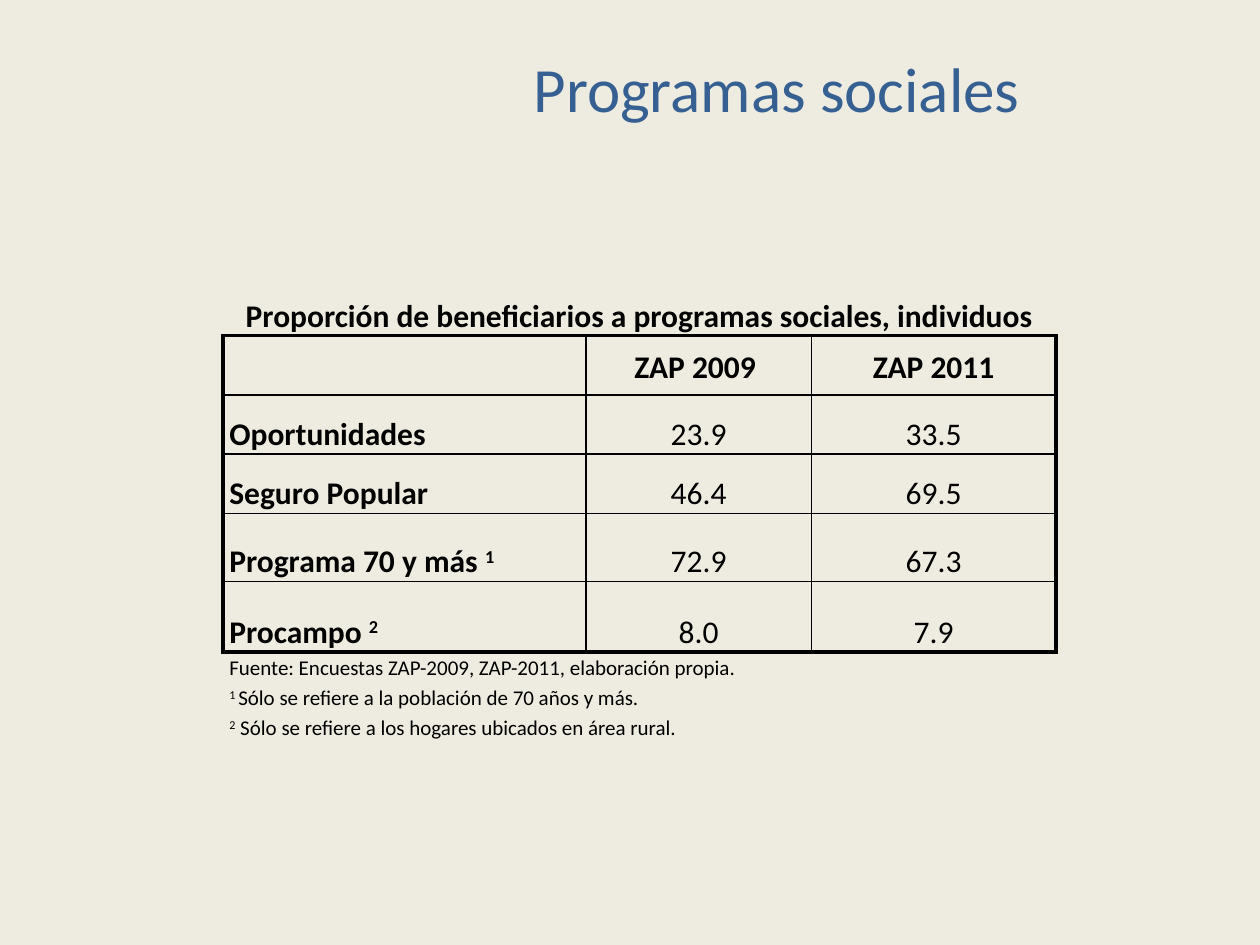
from dataclasses import dataclass
from lxml import etree
from pptx import Presentation
from pptx import util as u
from pptx.dml.color import RGBColor
from pptx.enum import text
from pptx.oxml.ns import qn

W, H = 10, 7.5
INK, BLUE, CREAM = "000000", "376092", "EEECE1"
THIN, THICK = 1, 2.25
LEFT, CENTER = text.PP_ALIGN.LEFT, text.PP_ALIGN.CENTER
BOTTOM, MIDDLE = text.MSO_ANCHOR.BOTTOM, text.MSO_ANCHOR.MIDDLE
COLS = [2.88, 1.79, 1.94]
FIRST, LAST = 1, 5


@dataclass
class Row:
    height: float
    cells: list
    size: int = 18
    bold: tuple = (True, False, False)
    align: tuple = (LEFT, CENTER, CENTER)
    anchor: int = BOTTOM


def note(height: float, *runs: tuple) -> Row:
    return Row(height, [runs], 12)


ROWS = [
    Row(0.49, ["Proporción de beneficiarios a programas sociales, individuos"],
        align=(CENTER,)),
    Row(0.47, ["", "ZAP 2009 ", "ZAP 2011"], bold=(True,) * 3, anchor=MIDDLE),
    Row(0.47, ["Oportunidades", "23.9", "33.5"]),
    Row(0.47, ["Seguro Popular", "46.4", "69.5"]),
    Row(0.54, [[("Programa 70 y más ", 0), ("1", 30)], "72.9", "67.3"]),
    Row(0.56, [[("Procampo ", 0), ("2", 30)], "8.0", "7.9"]),
    note(0.2, ("Fuente: Encuestas ZAP-2009, ZAP-2011, elaboración propia.", 0)),
    note(0.24, ("1 ", 30), ("Sólo se refiere a la población de 70 años y más.", 0)),
    note(0.16, ("2", 30), (" Sólo se refiere a los hogares ubicados en área rural.", 0)),
]


def color(value: str) -> RGBColor:
    return RGBColor.from_string(value)


def style(font, fmt: dict, ink: str) -> None:
    for name, value in fmt.items():
        setattr(font, name, value)
    font.color.rgb = color(ink)


def border_widths(i: int, j: int) -> dict:
    inside = FIRST <= i <= LAST
    return {
        "lnL": (THICK if j == 0 else THIN) if inside else 0,
        "lnR": (THICK if j == len(COLS) - 1 else THIN) if inside else 0,
        "lnT": THICK if i in (FIRST, LAST + 1) else THIN if inside else 0,
        "lnB": THICK if i in (FIRST - 1, LAST) else THIN if inside else 0,
    }


def draw_borders(cell, widths: dict) -> None:
    tcPr = cell._tc.get_or_add_tcPr()
    for k, (side, width) in enumerate(widths.items()):
        ln = etree.Element(qn(f"a:{side}"), w=str(int(u.Pt(width))))
        fill = etree.SubElement(ln, qn("a:solidFill" if width else "a:noFill"))
        if width:
            etree.SubElement(fill, qn("a:srgbClr"), val=INK)
        tcPr.insert(k, ln)


def fill_cell(cell, content, row: Row, j: int) -> None:
    fmt = {"size": u.Pt(row.size), "name": "Calibri",
           "bold": row.bold[j] if row.size == 18 else False}
    p = cell.text_frame.paragraphs[0]
    p.alignment, p.line_spacing = row.align[j], 1.15
    style(p.font, fmt, INK)
    for words, raised in [(content, 0)] if isinstance(content, str) else content:
        if not words:
            continue
        r = p.add_run()
        r.text = words
        style(r.font, fmt, INK)
        if raised:
            r._r.get_or_add_rPr().set("baseline", str(raised * 1000))


def draw_table(s, left: float, top: float) -> None:
    width, height = sum(COLS), sum(row.height for row in ROWS)
    frame = s.shapes.add_table(len(ROWS), len(COLS), u.Inches(left * W),
                               u.Inches(top * H), u.Inches(width), u.Inches(height))
    table = frame.table
    table.first_row = table.horz_banding = False
    for column, share in zip(table.columns, COLS):
        column.width = u.Inches(share)
    margins = {"margin_left": u.Inches(0.05), "margin_right": u.Inches(0.05),
               "margin_top": 0, "margin_bottom": 0}
    for i, row in enumerate(ROWS):
        table.rows[i].height = u.Inches(row.height)
        for j in range(len(COLS)):
            cell = table.cell(i, j)
            cell.fill.background()
            draw_borders(cell, border_widths(i, j))
            for name, value in {**margins, "vertical_anchor": row.anchor}.items():
                setattr(cell, name, value)
        if len(row.cells) == 1:
            table.cell(i, 0).merge(table.cell(i, len(COLS) - 1))
        for j, content in enumerate(row.cells):
            fill_cell(table.cell(i, j), content, row, j)


def draw_title(s, words: str, box: tuple) -> None:
    sp = s.shapes.title
    for name, share, size in zip(("left", "top", "width", "height"), box, (W, H, W, H)):
        setattr(sp, name, u.Inches(share * size))
    tf = sp.text_frame
    tf.vertical_anchor = MIDDLE
    p = tf.paragraphs[0]
    p.alignment = CENTER
    r = p.add_run()
    r.text = words
    style(r.font, {"size": u.Pt(36), "name": "Calibri"}, BLUE)


def main() -> None:
    prs = Presentation()
    prs.slide_width, prs.slide_height = u.Inches(W), u.Inches(H)
    s = prs.slides.add_slide(prs.slide_layouts[5])
    s.background.fill.solid()
    s.background.fill.fore_color.rgb = color(CREAM)
    draw_title(s, "Programas sociales", (0.283, 0.04, 0.667, 0.104))
    draw_table(s, 0.177, 0.29)
    prs.save("out.pptx")


if __name__ == "__main__":
    main()
